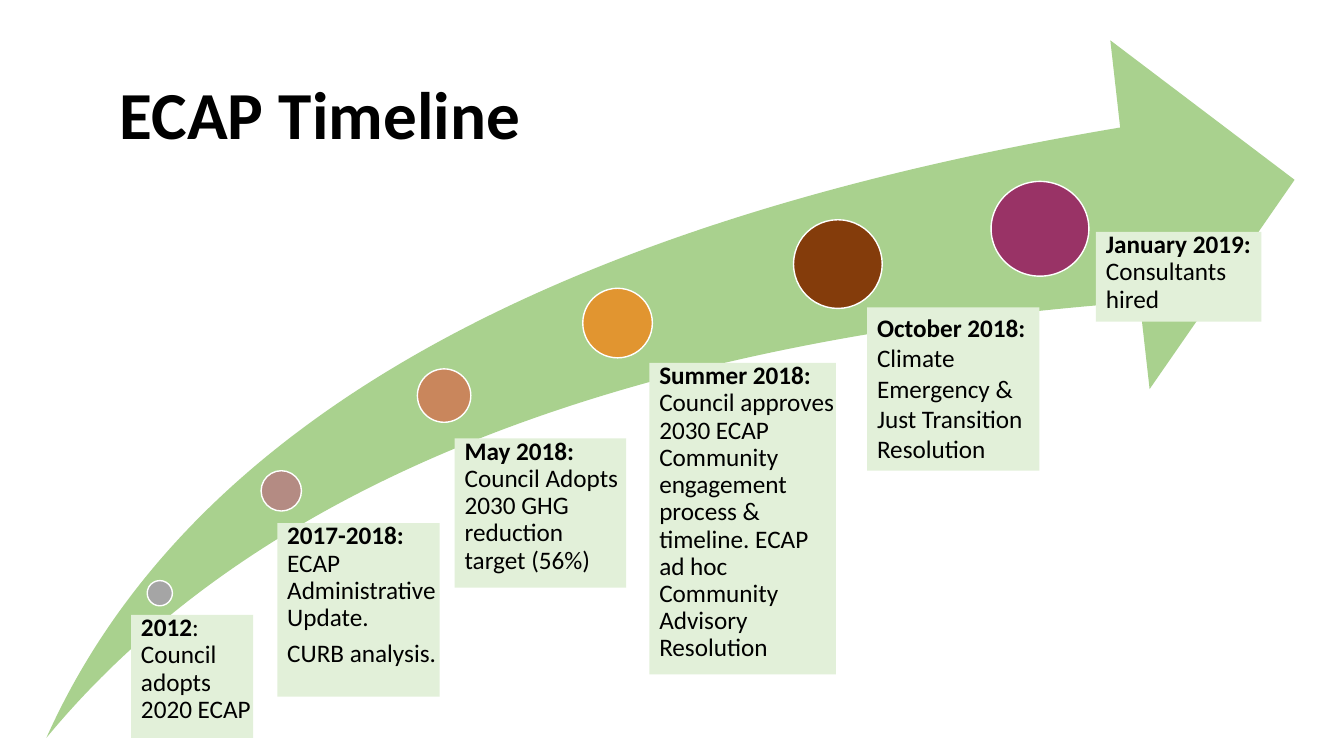
from pptx import Presentation
from pptx.dml.color import RGBColor
from pptx.enum.shapes import MSO_SHAPE as Preset
from pptx.enum.text import MSO_ANCHOR as Anchor, MSO_AUTO_SIZE as AutoSize, PP_ALIGN as Align
from pptx.util import Inches, Pt

TITLE = "ECAP Timeline"
FONT = "Calibri"
COLORS = {"arrow": "A9D18E", "card": "E2F0D9", "text": "000000", "outline": "FFFFFF",
          "grey": "A5A5A5", "rose": "B48B83", "clay": "C9865C", "amber": "E19530",
          "brown": "843C0B", "plum": "993366"}

# Each dot is (left, top, width, height, colour)
DOTS = [
    (1.46, 5.76, 0.25, 0.25, "grey"),
    (2.59, 4.67, 0.40, 0.40, "rose"),
    (4.14, 3.66, 0.53, 0.53, "clay"),
    (5.78, 2.86, 0.69, 0.69, "amber"),
    (7.87, 2.18, 0.88, 0.88, "brown"),
    (9.83, 1.80, 0.97, 0.94, "plum"),
]

# Each card is (place, paragraphs, line spacing, space after, top inset);
# a paragraph is (bold part, regular part)
TIGHT = (0.9, 6.3, 0)
LOOSE = (1.0, 0, 0.05)
CARDS = [
    ((1.30, 6.10, 1.21, 1.22),
     [("2012", ":"), ("", "Council adopts"), ("", "2020 ECAP")], (0.9, 0, 0)),
    ((2.75, 5.19, 1.61, 1.72),
     [("2017-2018: ", "ECAP Administrative Update."), ("", "CURB analysis.")], TIGHT),
    ((4.51, 4.35, 1.70, 1.48),
     [("May 2018: ", "Council Adopts 2030 GHG reduction target (56%)")], TIGHT),
    ((6.44, 3.60, 1.85, 3.09),
     [("Summer 2018: ", "Council approves 2030 ECAP Community engagement process & "
       "timeline. ECAP ad hoc Community Advisory Resolution")], TIGHT),
    ((8.60, 3.05, 1.71, 1.62),
     [("October 2018: ", "Climate Emergency & Just Transition Resolution")], LOOSE),
    ((10.87, 2.30, 1.64, 0.89),
     [("January 2019: ", "Consultants hired")], TIGHT),
]


def color(name):
    return RGBColor.from_string(COLORS[name])


def add_shape(page, preset, place, fill, outline=None):
    shape = page.shapes.add_shape(preset, *map(Inches, place))
    shape.shadow.inherit = False
    shape.fill.solid()
    shape.fill.fore_color.rgb = color(fill)
    if outline:
        shape.line.color.rgb = color(outline)
        shape.line.width = Pt(1)
    else:
        shape.line.fill.background()
    return shape


def add_span(para, text, size, bold):
    span = para.add_run()
    span.text = text
    span.font.name = FONT
    span.font.size = Pt(size)
    span.font.bold = bold
    span.font.color.rgb = color("text")


def add_card(page, place, paragraphs, style):
    line_spacing, space_after, top_inset = style
    frame = add_shape(page, Preset.RECTANGLE, place, "card").text_frame
    frame.word_wrap = True
    frame.vertical_anchor = Anchor.TOP
    frame.margin_left = Inches(0.1)
    frame.margin_right = 0
    frame.margin_top = frame.margin_bottom = Inches(top_inset)
    for index, (heading, detail) in enumerate(paragraphs):
        para = frame.add_paragraph() if index else frame.paragraphs[0]
        para.alignment = Align.LEFT
        para.line_spacing = line_spacing
        para.space_after = Pt(space_after)
        if heading:
            add_span(para, heading, 18, True)
        add_span(para, detail, 18, False)


def main():
    deck = Presentation()
    deck.slide_width, deck.slide_height = Inches(13.33), Inches(7.5)
    page = deck.slides.add_slide(deck.slide_layouts[5])

    # Title
    title = page.shapes.title
    title.left, title.top, title.width, title.height = map(Inches, (1.09, 0.44, 11.5, 1.45))
    frame = title.text_frame
    frame.auto_size = AutoSize.NONE
    frame.vertical_anchor = Anchor.MIDDLE
    para = frame.paragraphs[0]
    para.alignment = Align.LEFT
    para.line_spacing = 0.9
    add_span(para, TITLE, 48, True)

    # Rising arrow
    arrow = add_shape(page, Preset.SWOOSH_ARROW, (0.46, 0.4, 12.38, 6.92), "arrow")
    arrow.adjustments[0] = arrow.adjustments[1] = 0.25

    # Milestones
    for *place, fill in DOTS:
        add_shape(page, Preset.OVAL, place, fill, "outline")
    for card in CARDS:
        add_card(page, *card)

    deck.save("out.pptx")


if __name__ == "__main__":
    main()
